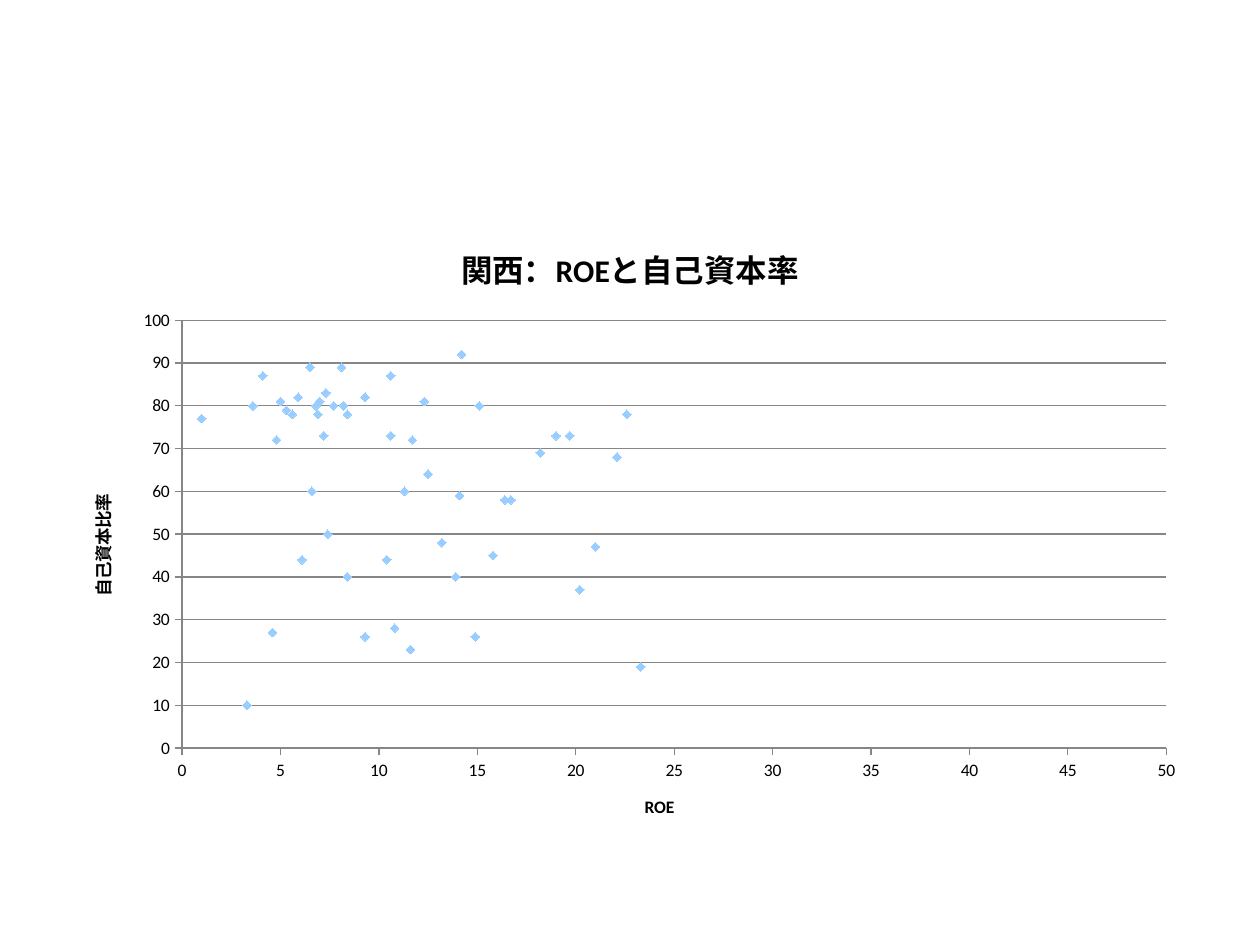
from lxml import etree
from pptx import Presentation
from pptx.chart.data import XyChartData
from pptx.dml.color import RGBColor
from pptx.enum.chart import XL_CHART_TYPE, XL_MARKER_STYLE, XL_TICK_MARK
from pptx.oxml.ns import qn
from pptx.util import Pt

SCATTER = XL_CHART_TYPE.XY_SCATTER
DIAMOND = XL_MARKER_STYLE.DIAMOND
OUTSIDE, NO_TICK = XL_TICK_MARK.OUTSIDE, XL_TICK_MARK.NONE
BLACK = RGBColor(0x00, 0x00, 0x00)
GREY = RGBColor(0x86, 0x86, 0x86)
LIGHT_BLUE = RGBColor(0x99, 0xCC, 0xFF)
FONT = "Calibri"

ROE = [
    14.2, 6.5, 8.1, 4.1, 10.6, 7.3, 9.3, 5.9, 7, 12.3, 5, 3.6, 15.1, 7.7,
    6.8, 8.2, 5.3, 8.4, 22.6, 5.6, 6.9, 1, 19, 7.2, 19.7, 10.6, 11.7, 4.8,
    18.2, 22.1, 12.5, 6.6, 11.3, 14.1, 16.4, 16.7, 7.4, 13.2, 21, 15.8,
    10.4, 6.1, 8.4, 13.9, 20.2, 20.2, 10.8, 4.6, 9.3, 14.9, 11.6, 23.3, 3.3,
]
EQUITY_RATIO = [
    92, 89, 89, 87, 87, 83, 82, 82, 81, 81, 81, 80, 80, 80,
    80, 80, 79, 78, 78, 78, 78, 77, 73, 73, 73, 73, 72, 72,
    69, 68, 64, 60, 60, 59, 58, 58, 50, 48, 47, 45,
    44, 44, 40, 40, 37, 37, 28, 27, 26, 26, 23, 19, 10,
]


def write_title(text_frame, parts, size):
    paragraph = text_frame.paragraphs[0]
    for part in parts:
        run = paragraph.add_run()
        run.text = part
        run.font.name = FONT
        run.font.size = Pt(size)
        run.font.bold = True
        run.font.color.rgb = BLACK


prs = Presentation()
prs.slide_width, prs.slide_height = Pt(720), Pt(540)
slide = prs.slides.add_slide(prs.slide_layouts[6])

data = XyChartData()
companies = data.add_series("Series 1")
for roe, ratio in zip(ROE, EQUITY_RATIO):
    companies.add_data_point(roe, ratio)

chart = slide.shapes.add_chart(
    SCATTER, Pt(36), Pt(126), Pt(648), Pt(356.4), data
).chart
chart.has_legend = False
chart.font.name = FONT
chart.font.size = Pt(10)
chart.font.color.rgb = BLACK
chart.has_title = True
write_title(chart.chart_title.text_frame, ["関西：", "ROE", "と自己資本率"], 18)

roe_axis, ratio_axis = chart.category_axis, chart.value_axis
for axis, title, top, step in (
    (roe_axis, "ROE", 50, 5),
    (ratio_axis, "自己資本比率", 100, 10),
):
    axis.minimum_scale, axis.maximum_scale, axis.major_unit = 0, top, step
    axis.major_tick_mark, axis.minor_tick_mark = OUTSIDE, NO_TICK
    axis.tick_labels.number_format = "General"
    axis.tick_labels.number_format_is_linked = False
    axis.format.line.color.rgb = GREY
    axis.format.line.width = Pt(0.75)
    axis.has_title = True
    write_title(axis.axis_title.text_frame, [title], 10)
roe_axis.has_major_gridlines = False
ratio_axis.has_major_gridlines = True
ratio_axis.major_gridlines.format.line.color.rgb = GREY
ratio_axis.major_gridlines.format.line.width = Pt(0.75)

plot = chart.plots[0]
plot.vary_by_categories = False
points = plot.series[0]
points.format.line.fill.background()
points.marker.style = DIAMOND
points.marker.size = 5
points.marker.format.fill.solid()
points.marker.format.fill.fore_color.rgb = LIGHT_BLUE
points.marker.format.line.color.rgb = LIGHT_BLUE

# Fix the inner plot area, as fractions of the chart frame
plot_area = chart.element.find(".//" + qn("c:plotArea"))
layout = plot_area.find(qn("c:layout"))
if layout is None:
    layout = etree.Element(qn("c:layout"))
    plot_area.insert(0, layout)
manual = etree.SubElement(layout, qn("c:manualLayout"))
for tag, value in (
    ("layoutTarget", "inner"), ("xMode", "edge"), ("yMode", "edge"),
    ("x", "0.105"), ("y", "0.16"), ("w", "0.868"), ("h", "0.686"),
):
    etree.SubElement(manual, qn("c:" + tag)).set("val", value)

prs.save("out.pptx")
